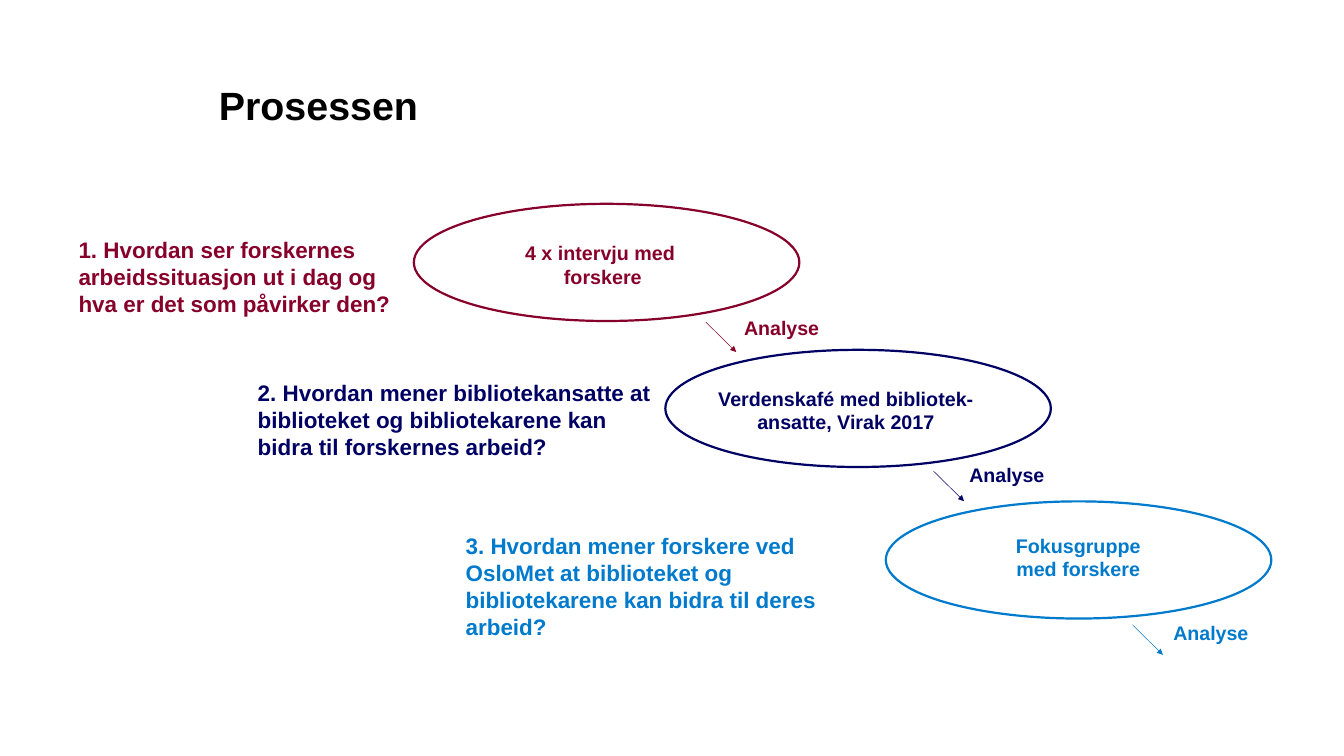
import pptx
import pptx.util
import pptx.dml.color
import pptx.enum.shapes
import pptx.enum.text
import pptx.oxml
import pptx.oxml.ns

Pt = pptx.util.Pt
ALIGN = pptx.enum.text.PP_ALIGN
ANCHOR = pptx.enum.text.MSO_ANCHOR

TITLE = "Prosessen"
TITLE_BOX = (222.5, 79, 1140, 52.5)
ELLIPSE_SIZE = (391.7, 119)
ARROW_SIZE = (31, 30.5)
ANALYSIS_SIZE = (102, 32)
STEPS = [
    {
        "color": "87002B",
        "question": "1. Hvordan ser forskernes arbeidssituasjon ut i dag og hva er det som påvirker den?",
        "question_box": (72.7, 236.3, 351.5, 90),
        "ellipse": (420.5, 207),
        "method": "4 x intervju med \nforskere",
        "method_box": (508.5, 241.4, 208, 55.5),
        "arrow": (717, 327),
        "analysis": (743.2, 317.5),
    },
    {
        "color": "000064",
        "question": "2. Hvordan mener bibliotekansatte at biblioteket og bibliotekarene kan bidra til forskernes arbeid?",
        "question_box": (254.8, 381.8, 415, 90),
        "ellipse": (676, 355.3),
        "method": "Verdenskafé med bibliotek- ansatte, Virak 2017",
        "method_box": (717, 389, 285, 55.5),
        "arrow": (948.5, 478.5),
        "analysis": (972, 467),
    },
    {
        "color": "007ACC",
        "question": "3. Hvordan mener forskere ved OsloMet at biblioteket og bibliotekarene kan bidra til deres arbeid?",
        "question_box": (466, 536.5, 433, 117),
        "ellipse": (900, 509.2),
        "method": "Fokusgruppe med forskere",
        "method_box": (1009.5, 538.2, 172, 55.5),
        "arrow": (1150.5, 634.5),
        "analysis": (1179.3, 627.5),
    },
]


def rgb(value):
    return pptx.dml.color.RGBColor.from_string(value)


def add_text(slide, text, box, size, color, align=ALIGN.LEFT,
             anchor=ANCHOR.TOP, margin=None, line_spacing=None):
    frame = slide.shapes.add_textbox(*map(Pt, box)).text_frame
    frame.word_wrap = True
    frame.vertical_anchor = anchor
    if margin is not None:
        frame.margin_left = frame.margin_right = Pt(margin)
        frame.margin_top = frame.margin_bottom = Pt(margin)
    frame.text = text
    for paragraph in frame.paragraphs:
        paragraph.alignment = align
        paragraph.line_spacing = line_spacing
        for run in paragraph.runs:
            run.font.name = "Arial"
            run.font.size = Pt(size)
            run.font.bold = True
            run.font.color.rgb = rgb(color)


def add_ellipse(slide, position, color):
    ellipse = slide.shapes.add_shape(
        pptx.enum.shapes.MSO_SHAPE.OVAL, *map(Pt, position + ELLIPSE_SIZE))
    ellipse.shadow.inherit = False
    ellipse.fill.background()
    ellipse.line.color.rgb = rgb(color)
    ellipse.line.width = Pt(2.25)


def add_arrow(slide, start, color):
    end = (start[0] + ARROW_SIZE[0], start[1] + ARROW_SIZE[1])
    arrow = slide.shapes.add_connector(
        pptx.enum.shapes.MSO_CONNECTOR.STRAIGHT, *map(Pt, start + end))
    arrow.line.color.rgb = rgb(color)
    arrow.line.width = Pt(0.5)
    properties = arrow.element.spPr
    line = properties.find(pptx.oxml.ns.qn("a:ln"))
    line.append(pptx.oxml.parse_xml(
        f'<a:tailEnd {pptx.oxml.ns.nsdecls("a")} type="triangle"/>'))
    properties.append(pptx.oxml.parse_xml(
        f'<a:effectLst {pptx.oxml.ns.nsdecls("a")}/>'))


def main():
    presentation = pptx.Presentation()
    presentation.slide_width = Pt(1365.5)
    presentation.slide_height = Pt(767.75)
    slide = presentation.slides.add_slide(presentation.slide_layouts[6])
    add_text(slide, TITLE, TITLE_BOX, 40, "000000",
             anchor=ANCHOR.BOTTOM, margin=0, line_spacing=0.9)
    for step in STEPS:
        color = step["color"]
        add_text(slide, step["question"], step["question_box"], 22.8, color)
        add_ellipse(slide, step["ellipse"], color)
        add_text(slide, step["method"], step["method_box"], 20, color, align=ALIGN.CENTER)
        add_arrow(slide, step["arrow"], color)
        add_text(slide, "Analyse", step["analysis"] + ANALYSIS_SIZE, 19.9, color,
                 align=ALIGN.CENTER)
    presentation.save("out.pptx")


if __name__ == "__main__":
    main()
